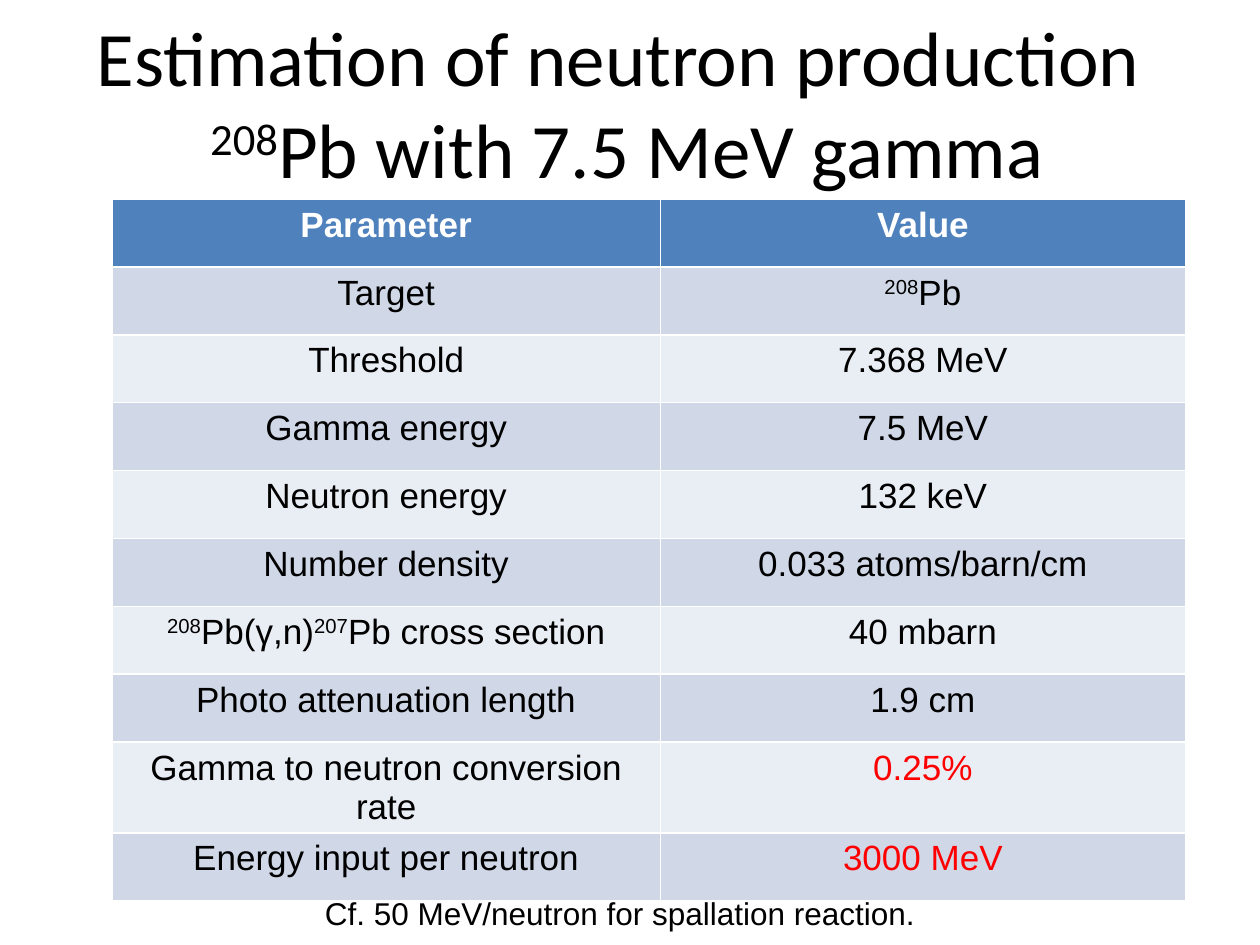
from pptx import Presentation
from pptx.dml.color import RGBColor
from pptx.enum.text import MSO_ANCHOR, MSO_AUTO_SIZE, PP_ALIGN
from pptx.util import Pt

CENTER, LEFT = PP_ALIGN.CENTER, PP_ALIGN.LEFT
MIDDLE = MSO_ANCHOR.MIDDLE
NO_FIT, GROW = MSO_AUTO_SIZE.NONE, MSO_AUTO_SIZE.SHAPE_TO_FIT_TEXT
TITLE_ONLY = 5

BLACK, WHITE, RED = "000000", "FFFFFF", "FF0000"
HEADER_FILL, BAND_FILLS = "4F81BD", ("D0D8E8", "E9EDF4")

# Text between carets is superscript
ROWS = [
    ("Parameter", "Value"),
    ("Target", "^208^Pb"),
    ("Threshold", "7.368 MeV"),
    ("Gamma energy", "7.5 MeV"),
    ("Neutron energy", "132 keV"),
    ("Number density", "0.033 atoms/barn/cm"),
    ("^208^Pb(γ,n)^207^Pb cross section", "40 mbarn"),
    ("Photo attenuation length", "1.9 cm"),
    ("Gamma to neutron conversion rate", "0.25%"),
    ("Energy input per neutron", "3000 MeV"),
]
RED_VALUES = ("0.25%", "3000 MeV")
COLUMN_WIDTHS = (313.2, 300.2)
ROW_HEIGHT = 38.8


def color(value):
    return RGBColor.from_string(value)


def set_attributes(target, values):
    for name, value in values.items():
        setattr(target, name, value)


def write_text(paragraph, text, size, font="Arial", fill=BLACK, bold=False,
               alignment=CENTER):
    """Write lines of text, raising the parts between carets."""
    paragraph.alignment = alignment
    for line_number, line in enumerate(text.split("\n")):
        if line_number:
            paragraph.add_line_break()
        for index, part in enumerate(line.split("^")):
            if not part:
                continue
            run = paragraph.add_run()
            run.text = part
            set_attributes(run.font, {"name": font, "size": Pt(size), "bold": bold})
            run.font.color.rgb = color(fill)
            if index % 2:
                run.font._element.set("baseline", "30000")


def add_title(slide, text):
    title = slide.shapes.title
    set_attributes(title, {"left": Pt(34.5), "top": Pt(27.4),
                           "width": Pt(648), "height": Pt(61.2)})
    set_attributes(title.text_frame, {"auto_size": NO_FIT, "word_wrap": True,
                                      "vertical_anchor": MIDDLE})
    write_text(title.text_frame.paragraphs[0], text, 44, font="Calibri")


def add_parameter_table(slide):
    table = slide.shapes.add_table(
        len(ROWS), len(COLUMN_WIDTHS), Pt(64.1), Pt(113.8),
        Pt(sum(COLUMN_WIDTHS)), Pt(ROW_HEIGHT * len(ROWS))).table
    for column, width in zip(table.columns, COLUMN_WIDTHS):
        column.width = Pt(width)
    for row_index, texts in enumerate(ROWS):
        is_header = row_index == 0
        row_fill = HEADER_FILL if is_header else BAND_FILLS[(row_index - 1) % 2]
        table.rows[row_index].height = Pt(ROW_HEIGHT)
        for column_index, text in enumerate(texts):
            cell = table.cell(row_index, column_index)
            cell.fill.solid()
            cell.fill.fore_color.rgb = color(row_fill)
            text_color = WHITE if is_header else RED if text in RED_VALUES else BLACK
            write_text(cell.text_frame.paragraphs[0], text, 20,
                       fill=text_color, bold=is_header)


def add_note(slide, text):
    box = slide.shapes.add_textbox(Pt(178.6), Pt(507.6), Pt(380.2), Pt(28.8))
    set_attributes(box.text_frame, {"word_wrap": True, "auto_size": GROW})
    write_text(box.text_frame.paragraphs[0], text, 18, alignment=LEFT)


def main():
    presentation = Presentation()
    set_attributes(presentation, {"slide_width": Pt(720), "slide_height": Pt(540)})
    slide = presentation.slides.add_slide(presentation.slide_layouts[TITLE_ONLY])

    # Heading
    add_title(slide, "Estimation of neutron production \n^208^Pb with 7.5 MeV gamma")
    # Parameters and the comparison below them
    add_parameter_table(slide)
    add_note(slide, "Cf. 50 MeV/neutron for spallation reaction.")

    presentation.save("out.pptx")


if __name__ == "__main__":
    main()
